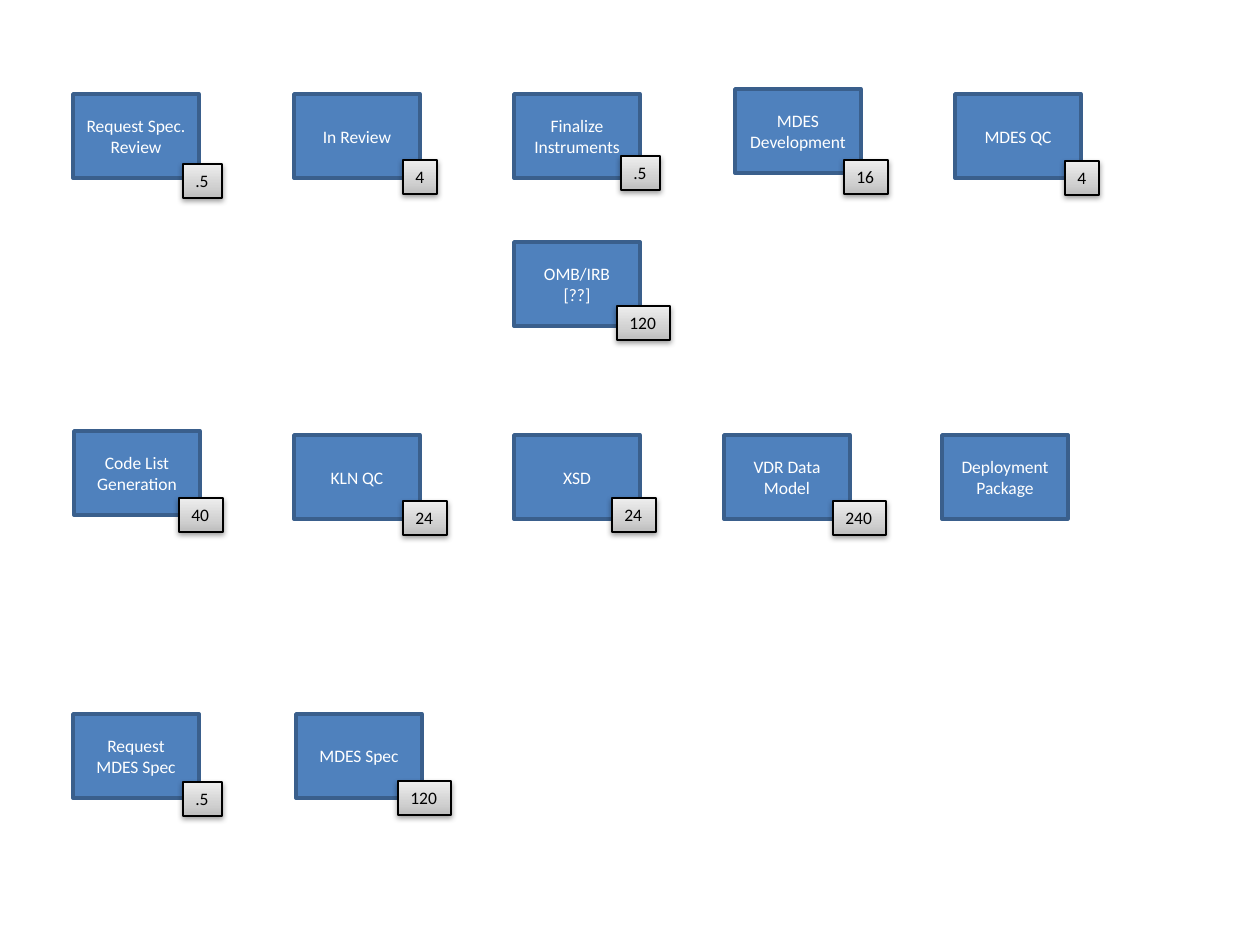
"""Build a slide of process steps, each with its hours on a badge."""
from typing import NamedTuple

from lxml.etree import fromstring
from pptx import Presentation
from pptx.dml.color import RGBColor
from pptx.enum.shapes import MSO_SHAPE as Shape
from pptx.enum.text import MSO_ANCHOR as Anchor, MSO_AUTO_SIZE as Fit, PP_ALIGN as Align
from pptx.oxml.ns import nsdecls
from pptx.util import Emu, Pt

SCALE = 914400 / 126
STEP_W, STEP_H, BADGE_H = 126, 84, 34
WIDTHS = {"4": 34, ".5": 39, "16": 44, "24": 44, "40": 44, "120": 53, "240": 53}
STOPS = ((0, "BDBDBD"), (35, "D1D1D1"), (100, "EEEEEE"))


class Label(NamedTuple):
    x: int
    y: int
    text: str


STEPS = (
    Label(73, 94, "Request Spec. Review"),
    Label(294, 94, "In Review"),
    Label(514, 94, "Finalize Instruments"),
    Label(735, 89, "MDES Development"),
    Label(955, 94, "MDES QC"),
    Label(514, 242, "OMB/IRB\n[??]"),
    Label(74, 431, "Code List Generation"),
    Label(294, 435, "KLN QC"),
    Label(514, 435, "XSD"),
    Label(724, 435, "VDR Data Model"),
    Label(942, 435, "Deployment Package"),
    Label(73, 714, "Request\nMDES Spec"),
    Label(296, 714, "MDES Spec"),
)
BADGES = (
    Label(183, 164, ".5"),
    Label(403, 160, "4"),
    Label(621, 156, ".5"),
    Label(844, 160, "16"),
    Label(1065, 161, "4"),
    Label(617, 306, "120"),
    Label(179, 498, "40"),
    Label(403, 501, "24"),
    Label(612, 498, "24"),
    Label(833, 501, "240"),
    Label(183, 782, ".5"),
    Label(398, 781, "120"),
)


def px(n: int) -> Emu:
    """Turn px into EMU."""
    return Emu(round(n * SCALE))


def rgb(code: str) -> RGBColor:
    """Turn a hex string into a colour."""
    return RGBColor.from_string(code)


def draw_box(slide, label: Label, w: int, h: int, edge: str, thick: float,
             ink: str, align: Align):
    """Draw a lined rectangle with its text."""
    box = slide.shapes.add_shape(Shape.RECTANGLE, px(label.x), px(label.y), px(w), px(h))
    box.shadow.inherit = False
    box.line.color.rgb = rgb(edge)
    box.line.width = Pt(thick)
    box.text_frame.text = label.text
    for para in box.text_frame.paragraphs:
        para.alignment = align
        para.font.name = "Calibri"
        para.font.size = Pt(10)
        para.font.color.rgb = rgb(ink)
    return box


def draw_step(slide, label: Label) -> None:
    """Draw a blue process step."""
    box = draw_box(slide, label, STEP_W, STEP_H, "3A5F8C", 2, "FFFFFF", Align.CENTER)
    box.fill.solid()
    box.fill.fore_color.rgb = rgb("4F81BD")
    box.text_frame.word_wrap = True
    box.text_frame.vertical_anchor = Anchor.MIDDLE


def draw_badge(slide, label: Label) -> None:
    """Draw a grey badge with a gradient and a soft shadow."""
    box = draw_box(slide, label, WIDTHS[label.text], BADGE_H, "000000", 0.75,
                   "000000", Align.LEFT)
    frame = box.text_frame
    frame.word_wrap = False
    frame.auto_size = Fit.SHAPE_TO_FIT_TEXT
    frame.vertical_anchor = Anchor.TOP
    stops = "".join(f'<a:gs pos="{at * 1000}"><a:srgbClr val="{code}"/></a:gs>'
                    for at, code in STOPS)
    props = box.element.spPr
    props.find("{*}ln").addprevious(fromstring(
        f'<a:gradFill {nsdecls("a")} rotWithShape="1"><a:gsLst>{stops}</a:gsLst>'
        '<a:lin ang="16200000" scaled="1"/></a:gradFill>'))
    props.find("{*}effectLst").append(fromstring(
        f'<a:outerShdw {nsdecls("a")} blurRad="40000" dist="20000" dir="5400000" '
        'rotWithShape="0"><a:srgbClr val="000000"><a:alpha val="38000"/>'
        '</a:srgbClr></a:outerShdw>'))


def main() -> None:
    """Build and save the slide."""
    deck = Presentation()
    deck.slide_width, deck.slide_height = px(1260), px(945)
    slide = deck.slides.add_slide(deck.slide_layouts[6])
    for step in STEPS:
        draw_step(slide, step)
    for badge in BADGES:
        draw_badge(slide, badge)
    deck.save("out.pptx")


if __name__ == "__main__":
    main()
